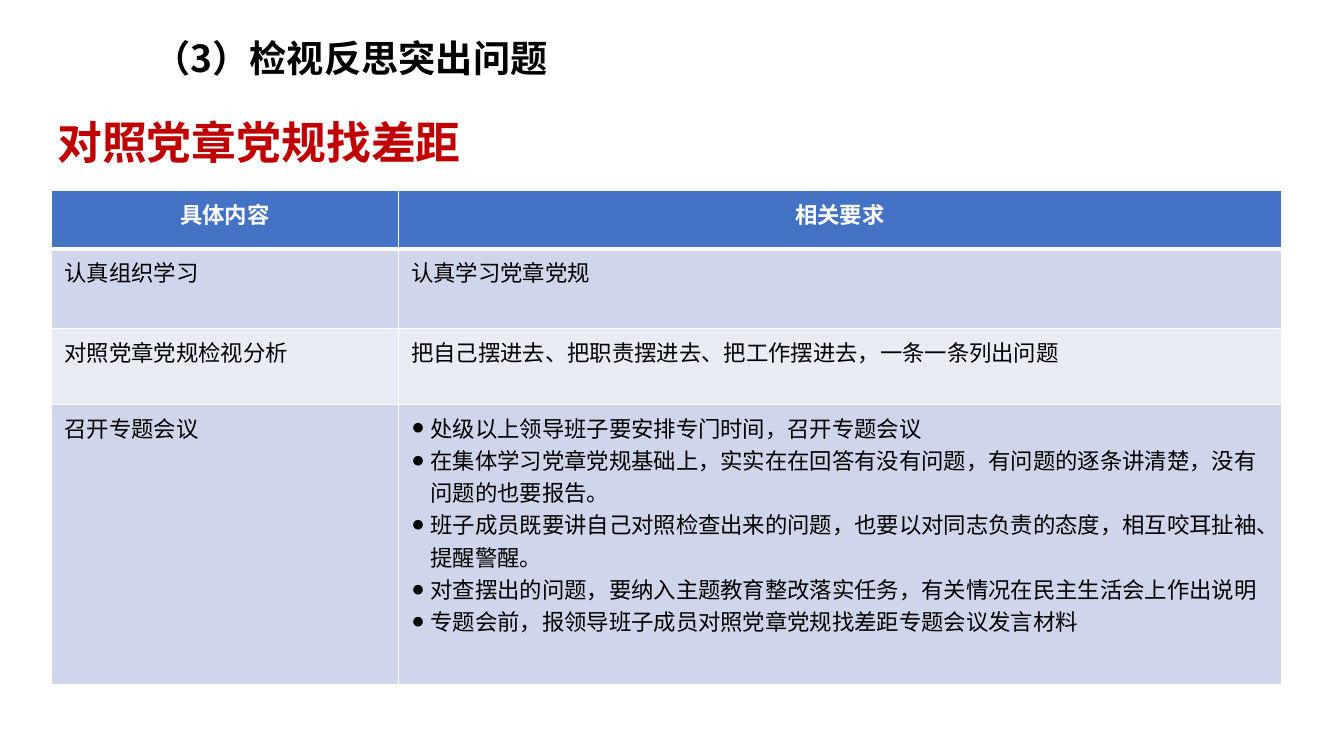
from pptx import Presentation
from pptx import util as u
from pptx.dml.color import RGBColor
from pptx.enum import text as t
from pptx.oxml import parse_xml
from pptx.oxml.ns import nsdecls

PX = 9144  # one hundredth of an inch
BLACK = RGBColor(0x00, 0x00, 0x00)
WHITE = RGBColor(0xFF, 0xFF, 0xFF)
RED = RGBColor(0xC0, 0x00, 0x00)
BLUE = RGBColor(0x44, 0x72, 0xC4)
DARK = RGBColor(0xCF, 0xD5, 0xEA)
LIGHT = RGBColor(0xE9, 0xEB, 0xF5)
SANS = "Noto Sans CJK SC"
NARROW = "Arial Narrow"

ROWS = [
    ("具体内容", "相关要求"),
    ("认真组织学习", "认真学习党章党规"),
    ("对照党章党规检视分析", "把自己摆进去、把职责摆进去、把工作摆进去，一条一条列出问题"),
    ("召开专题会议", [
        "处级以上领导班子要安排专门时间，召开专题会议",
        "在集体学习党章党规基础上，实实在在回答有没有问题，有问题的逐条讲清楚，没有问题的也要报告。",
        "班子成员既要讲自己对照检查出来的问题，也要以对同志负责的态度，相互咬耳扯袖、提醒警醒。",
        "对查摆出的问题，要纳入主题教育整改落实任务，有关情况在民主生活会上作出说明",
        "专题会前，报领导班子成员对照党章党规找差距专题会议发言材料",
    ]),
]


def px(*nums):
    return [u.Emu(n * PX) for n in nums]


def write(frame, lines, size=16, face=NARROW, color=BLACK, bold=False,
          align=t.PP_ALIGN.LEFT, indent=0):
    """Fill a text frame with one or more lines; an indent adds bullets."""
    lines = [lines] if isinstance(lines, str) else lines
    for i, line in enumerate(lines):
        par = frame.paragraphs[0] if i == 0 else frame.add_paragraph()
        par.alignment = align
        if indent:
            props = par._p.get_or_add_pPr()
            props.set("marL", str(indent * PX))
            props.set("indent", str(-indent * PX))
            props.append(parse_xml(f'<a:buFont {nsdecls("a")} typeface="Arial"/>'))
            props.append(parse_xml(f'<a:buChar {nsdecls("a")} char="●"/>'))
        run = par.add_run()
        run.text = line
        font = run.font
        font.size, font.name, font.bold = u.Pt(size), face, bold
        font.color.rgb = color
        run._r.get_or_add_rPr().append(
            parse_xml(f'<a:ea {nsdecls("a")} typeface="{SANS}"/>'))


class Page:
    def __init__(self, deck):
        self.slide = deck.slides.add_slide(deck.slide_layouts[6])

    def title(self, words, box, wrap=True, **style):
        frame = self.slide.shapes.add_textbox(*px(*box)).text_frame
        frame.word_wrap = wrap
        frame.vertical_anchor = t.MSO_ANCHOR.MIDDLE
        write(frame, words, face=SANS, bold=True, **style)

    def edge(self, cell, side, width):
        cell._tc.get_or_add_tcPr().append(parse_xml(
            f'<a:ln{side} {nsdecls("a")} w="{u.Pt(width)}"><a:solidFill>'
            f'<a:srgbClr val="{WHITE}"/></a:solidFill></a:ln{side}>'))

    def cell(self, cell, row, words):
        head = row == 0
        for side in "LRTB":
            thick = (row, side) in [(0, "B"), (1, "T")]
            self.edge(cell, side, 3 if thick else 1)
        cell.fill.solid()
        cell.fill.fore_color.rgb = BLUE if head else DARK if row % 2 else LIGHT
        cell.margin_left, cell.margin_top = px(13, 7)
        cell.margin_right, cell.margin_bottom = px(13, 7)
        write(cell.text_frame, words, bold=head,
              color=WHITE if head else BLACK,
              align=t.PP_ALIGN.CENTER if head else t.PP_ALIGN.LEFT,
              indent=19 if isinstance(words, list) else 0)

    def table(self, rows, left, top, wides, highs):
        grid = self.slide.shapes.add_table(
            len(highs), len(wides), *px(left, top, sum(wides), sum(highs))).table
        for col, wide in zip(grid.columns, px(*wides)):
            col.width = wide
        for i, high in enumerate(px(*highs)):
            grid.rows[i].height = high
            for j, words in enumerate(rows[i]):
                self.cell(grid.cell(i, j), i, words)


def main():
    deck = Presentation()
    deck.slide_width, deck.slide_height = px(1333, 750)
    page = Page(deck)
    page.title("（3）检视反思突出问题", (142, 30, 512, 55), size=26.6)
    page.title("对照党章党规找差距", (47, 108, 422, 64), wrap=False,
               size=32, color=RED)
    page.table(ROWS, 51, 189, wides=(344, 876), highs=(58, 79, 75, 278))
    deck.save("out.pptx")


if __name__ == "__main__":
    main()
